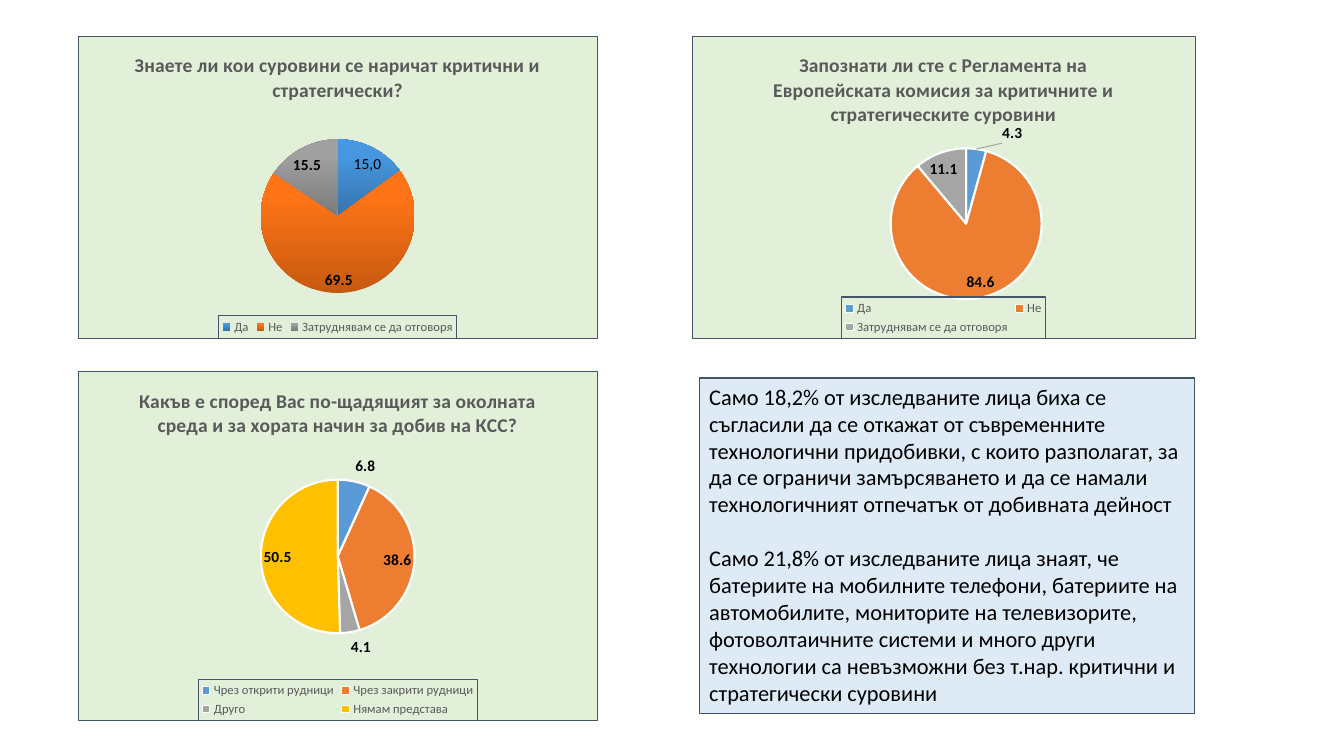
"""Build a survey slide with three pie charts and a panel of findings."""
from copy import deepcopy
from dataclasses import dataclass

from lxml.etree import _Element as Element
from pptx import Presentation
from pptx.chart.chart import Chart
from pptx.chart.data import CategoryChartData
from pptx.chart.series import PieSeries
from pptx.dml.color import RGBColor
from pptx.enum.chart import XL_CHART_TYPE as ChartType
from pptx.enum.chart import XL_LABEL_POSITION as LabelPosition
from pptx.enum.chart import XL_LEGEND_POSITION as LegendPosition
from pptx.enum.shapes import MSO_SHAPE as ShapeType
from pptx.enum.text import MSO_ANCHOR as Anchor
from pptx.enum.text import MSO_AUTO_SIZE as AutoSize
from pptx.enum.text import PP_ALIGN as Align
from pptx.oxml import parse_xml
from pptx.oxml.ns import nsdecls
from pptx.slide import Slide
from pptx.text.text import Font
from pptx.util import Pt

COLORS = {
    "text": "000000", "muted": "595959", "border": "44546A", "white": "FFFFFF",
    "chart": "E2F0D9", "panel": "DEEBF7", "leader": "A6A6A6",
    "blue": "5B9BD5", "orange": "ED7D31", "gray": "A5A5A5", "gold": "FFC000",
}
SLICES = ("blue", "orange", "gray", "gold")
GRADIENTS = (
    ("3674AD", "4697E0", "4498E4"),
    ("C65910", "FF7416", "FF7517"),
    ("7B7B7B", "A0A0A0", "A1A1A1"),
)
STOPS = (0, 0.8, 1)
FONT = "Calibri"
BORDER_WIDTH = 0.75
ANSWERS = ("Да", "Не", "Затруднявам се да отговоря")
FINDINGS = (
    "Само 18,2% от изследваните лица биха се съгласили да се откажат от съвременните "
    "технологични придобивки, с които разполагат, за да се ограничи замърсяването и да се "
    "намали технологичният отпечатък от добивната дейност",
    "Само 21,8% от изследваните лица знаят, че батериите на мобилните телефони, батериите на "
    "автомобилите, мониторите на телевизорите, фотоволтаичните системи и много други "
    "технологии са невъзможни без т.нар. критични и стратегически суровини",
)


@dataclass(frozen=True)
class Survey:
    """One question with its answers, box in points and plot area in fractions."""
    title: str
    categories: tuple[str, ...]
    values: tuple[float, ...]
    box: tuple[float, float, float, float]
    plot: tuple[float, float, float, float]
    shaded: bool = False
    first_label: str = ""
    first_offset: tuple[float, float] | None = None


SURVEYS = (
    Survey("Знаете ли кои суровини се наричат критични и стратегически?", ANSWERS,
           (15, 69.5, 15.5), (55.5, 26, 371.5, 216), (0.35, 0.34, 0.3, 0.51),
           shaded=True, first_label="15,0"),
    Survey("Запознати ли сте с Регламента на Европейската комисия за критичните и "
           "стратегическите суровини", ANSWERS,
           (4.3, 84.6, 11.1), (494, 26, 360, 216), (0.09, 0.37, 0.91, 0.5),
           first_offset=(0.05, 0)),
    Survey("Какъв е според Вас по-щадящият за околната среда и за хората начин за добив на КСС?",
           ("Чрез открити рудници", "Чрез закрити рудници", "Друго", "Нямам представа"),
           (6.8, 38.6, 4.1, 50.5), (55.5, 265, 371.5, 250), (0.35, 0.31, 0.3, 0.44)),
)


def color(name: str) -> RGBColor:
    """Return a named colour."""
    return RGBColor.from_string(COLORS[name])


def style_font(font: Font, size: float, name: str, bold: bool = False) -> None:
    """Set face, size, colour and weight."""
    font.name, font.size, font.bold = FONT, Pt(size), bold
    font.color.rgb = color(name)


def frame_xml(line: str, fill: str = "") -> Element:
    """Return chart part properties with a line and an optional fill."""
    paint = f'<a:solidFill><a:srgbClr val="{COLORS[fill]}"/></a:solidFill>' if fill else ""
    return parse_xml(
        f'<c:spPr {nsdecls("c", "a")}>{paint or "<a:noFill/>"}<a:ln w="{Pt(BORDER_WIDTH)}">'
        f'<a:solidFill><a:srgbClr val="{COLORS[line]}"/></a:solidFill></a:ln></c:spPr>')


def layout_xml(target: str, **places: float) -> Element:
    """Return a manual layout, with the target and modes given as XML."""
    values = "".join(f'<c:{key} val="{value}"/>' for key, value in places.items())
    return parse_xml(f'<c:layout {nsdecls("c")}><c:manualLayout>{target}{values}'
                     '</c:manualLayout></c:layout>')


def place_plot(chart: Chart, plot: tuple[float, float, float, float]) -> None:
    """Fix the inner plot area."""
    area = chart._chartSpace.chart.plotArea
    for layout in area.xpath("c:layout"):
        area.remove(layout)
    target = '<c:layoutTarget val="inner"/><c:xMode val="edge"/><c:yMode val="edge"/>'
    area.insert(0, layout_xml(target, **dict(zip("xywh", plot))))


def paint_slices(series: PieSeries, survey: Survey) -> None:
    """Colour each slice, shaded or flat with a white edge."""
    for index in range(len(survey.values)):
        style = series.points[index].format
        if not survey.shaded:
            style.fill.solid()
            style.fill.fore_color.rgb = color(SLICES[index])
            style.line.color.rgb = color("white")
            style.line.width = Pt(1.5)
            continue
        style.fill.gradient()
        style.fill.gradient_angle = 90
        stop_list = series._element.xpath("c:dPt//a:gsLst")[-1]
        stop_list.append(deepcopy(stop_list[-1]))
        for stop, position, value in zip(style.fill.gradient_stops, STOPS, GRADIENTS[index]):
            stop.position = position
            stop.color.rgb = RGBColor.from_string(value)
        style.line.fill.background()


def label_slices(series: PieSeries, survey: Survey) -> None:
    """Show values, with the first label adjusted where needed."""
    labels = series.data_labels
    labels.show_value = True
    labels.number_format, labels.number_format_is_linked = "0.0", False
    labels.position = LabelPosition.BEST_FIT
    style_font(labels.font, 11, "text", True)
    first = series.points[0].data_label
    if survey.first_label:
        first.text_frame.text = survey.first_label
        style_font(first.text_frame.paragraphs[0].runs[0].font, 11, "text")
        first.position = LabelPosition.BEST_FIT
    if survey.first_offset:
        style_font(first.font, 11, "text", True)
        first.position = LabelPosition.BEST_FIT
        label = series._element.xpath("c:dLbls/c:dLbl")[0]
        label.insert(1, layout_xml("", **dict(zip("xy", survey.first_offset))))
        leader = parse_xml(f'<c:leaderLines {nsdecls("c")}/>')
        leader.append(frame_xml("leader"))
        series._element.xpath("c:dLbls/c:showLeaderLines")[0].addnext(leader)


def add_survey(slide: Slide, survey: Survey) -> None:
    """Draw one pie chart."""
    data = CategoryChartData()
    data.categories = survey.categories
    data.add_series("Series 1", survey.values)
    box = [Pt(length) for length in survey.box]
    chart = slide.shapes.add_chart(ChartType.PIE, *box, data).chart
    style_font(chart.font, 10, "text")
    chart._chartSpace.chart.addnext(frame_xml("border", "chart"))
    chart.has_title = True
    chart.chart_title.text_frame.text = survey.title
    style_font(chart.chart_title.text_frame.paragraphs[0].runs[0].font, 14, "muted", True)
    chart.has_legend = True
    chart.legend.position = LegendPosition.BOTTOM
    chart.legend.include_in_layout = False
    style_font(chart.legend.font, 9, "muted")
    chart.legend._element.xpath("c:txPr")[0].addprevious(frame_xml("border"))
    place_plot(chart, survey.plot)
    chart.plots[0].vary_by_categories = True
    series = chart.plots[0].series[0]
    paint_slices(series, survey)
    label_slices(series, survey)


def add_findings(slide: Slide) -> None:
    """Draw the text panel."""
    panel = slide.shapes.add_shape(ShapeType.RECTANGLE, Pt(499.5), Pt(270), Pt(353.5), Pt(240))
    panel.shadow.inherit = False
    panel.fill.solid()
    panel.fill.fore_color.rgb = color("panel")
    panel.line.color.rgb = color("border")
    panel.line.width = Pt(BORDER_WIDTH)
    frame = panel.text_frame
    frame.text = "\n".join(FINDINGS)
    frame.word_wrap = True
    frame.auto_size = AutoSize.SHAPE_TO_FIT_TEXT
    frame.vertical_anchor = Anchor.TOP
    for paragraph in frame.paragraphs:
        paragraph.alignment = Align.LEFT
        style_font(paragraph.runs[0].font, 16, "text")
    frame.paragraphs[0].space_after = Pt(19.5)


def main() -> None:
    """Build and save the presentation."""
    presentation = Presentation()
    presentation.slide_width, presentation.slide_height = Pt(960), Pt(540)
    slide = presentation.slides.add_slide(presentation.slide_layouts[6])
    for survey in SURVEYS:
        add_survey(slide, survey)
    add_findings(slide)
    presentation.save("out.pptx")


if __name__ == "__main__":
    main()
